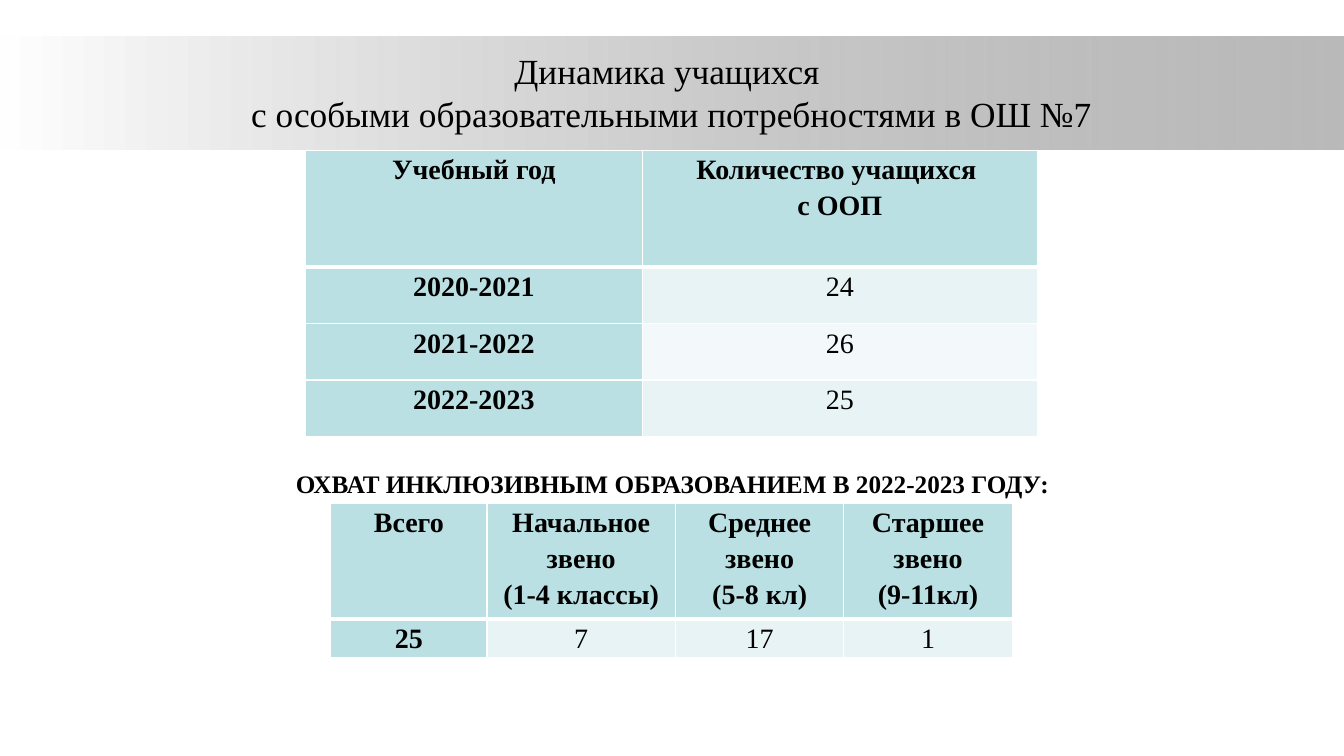
from lxml.etree import SubElement
from pptx import Presentation
from pptx.dml.color import RGBColor
from pptx.enum.shapes import MSO_SHAPE
from pptx.enum.text import MSO_ANCHOR, PP_ALIGN
from pptx.oxml.ns import qn
from pptx.util import Inches, Pt

COLORS = {
    "text": "000000",
    "white": "FFFFFF",
    "gray": "808080",
    "head": "BBE0E3",
    "band_dark": "E7F3F4",
    "band_light": "F3F9FA",
}


def rgb(name):
    return RGBColor.from_string(COLORS[name])


def write(tf, text, size=20, bold=False, font="Times New Roman", color="text", spacing=None):
    """Fill a text frame; a new line starts a paragraph, \\v breaks a line."""
    tf.word_wrap = True
    for i, line in enumerate(text.split("\n")):
        p = tf.add_paragraph() if i else tf.paragraphs[0]
        p.text = line
        p.alignment = PP_ALIGN.CENTER
        p.line_spacing = spacing
        for r in p.runs:
            r.font.name = font
            r.font.size = Pt(size)
            r.font.bold = bold
            r.font.color.rgb = rgb(color)


def add_border(cell, side, width):
    ln = SubElement(cell._tc.get_or_add_tcPr(), qn("a:" + side), w=str(Pt(width)))
    fill = SubElement(ln, qn("a:solidFill"))
    SubElement(fill, qn("a:srgbClr"), val=COLORS["white"])


class Deck:
    def __init__(self):
        self.prs = Presentation()
        self.prs.slide_width, self.prs.slide_height = Inches(13.33), Inches(7.5)
        self.s = self.prs.slides.add_slide(self.prs.slide_layouts[6])

    def band(self, *box, opacity):
        sp = self.s.shapes.add_shape(MSO_SHAPE.RECTANGLE, *map(Inches, box))
        sp.shadow.inherit = False
        sp.line.fill.background()
        sp.fill.gradient()
        sp.fill.gradient_angle = 0
        for stop, color, position in zip(sp.fill.gradient_stops, ("white", "gray"), (0, 1)):
            stop.color.rgb = rgb(color)
            stop.position = position
        end_color = sp._element.spPr.findall(".//" + qn("a:srgbClr"))[-1]
        SubElement(end_color, qn("a:alpha"), val=str(opacity * 1000))

    def text(self, text, *box, anchor=MSO_ANCHOR.TOP, **fmt):
        sp = self.s.shapes.add_textbox(*map(Inches, box))
        sp.text_frame.vertical_anchor = anchor
        write(sp.text_frame, text, **fmt)

    def table(self, rows, left, top, widths, heights):
        size = Inches(sum(widths)), Inches(sum(heights))
        tbl = self.s.shapes.add_table(
            len(rows), len(widths), Inches(left), Inches(top), *size).table
        for column, width in zip(tbl.columns, widths):
            column.width = Inches(width)
        for i, values in enumerate(rows):
            tbl.rows[i].height = Inches(heights[i])
            for j, value in enumerate(values):
                self.cell(tbl.cell(i, j), value, i, j)

    def cell(self, cell, value, i, j):
        is_head = i == 0 or j == 0
        cell.margin_left = cell.margin_right = Inches(0.07)
        cell.margin_top = cell.margin_bottom = 0
        write(cell.text_frame, value, bold=is_head, spacing=1.15)
        # A thick rule separates the header row from the data
        widths = {"lnL": 1, "lnR": 1, "lnT": 3 if i == 1 else 1, "lnB": 3 if i == 0 else 1}
        for side, width in widths.items():
            add_border(cell, side, width)
        cell.fill.solid()
        band = "band_dark" if i % 2 else "band_light"
        cell.fill.fore_color.rgb = rgb("head" if is_head else band)


def main():
    deck = Deck()

    # Title on a gradient band
    deck.band(0, 0.36, 13.33, 1.12, opacity=54)
    deck.text("Динамика учащихся \vс особыми образовательными потребностями в ОШ №7",
              2, 0.46, 9.32, 0.92, anchor=MSO_ANCHOR.BOTTOM, size=25.2)

    # Pupils by school year
    deck.table([
        ("Учебный год", "Количество учащихся \nс ООП"),
        ("2020-2021", "24"),
        ("2021-2022", "26"),
        ("2022-2023", "25"),
    ], 3.03, 1.49, (3.34, 3.92), (1.16, 0.56, 0.56, 0.56))

    # Coverage by school stage
    deck.table([
        ("Всего", "Начальное звено\n(1-4 классы)", "Среднее звено\n(5-8 кл)",
         "Старшее звено\n(9-11кл)"),
        ("25", "7", "17", "1"),
    ], 3.28, 4.99, (1.55, 1.87, 1.67, 1.67), (1.05, 0.35))
    deck.text("ОХВАТ ИНКЛЮЗИВНЫМ ОБРАЗОВАНИЕМ В 2022-2023 ГОДУ:",
              2.42, 4.6, 8.5, 0.71, size=18, bold=True)

    deck.prs.save("out.pptx")


if __name__ == "__main__":
    main()
